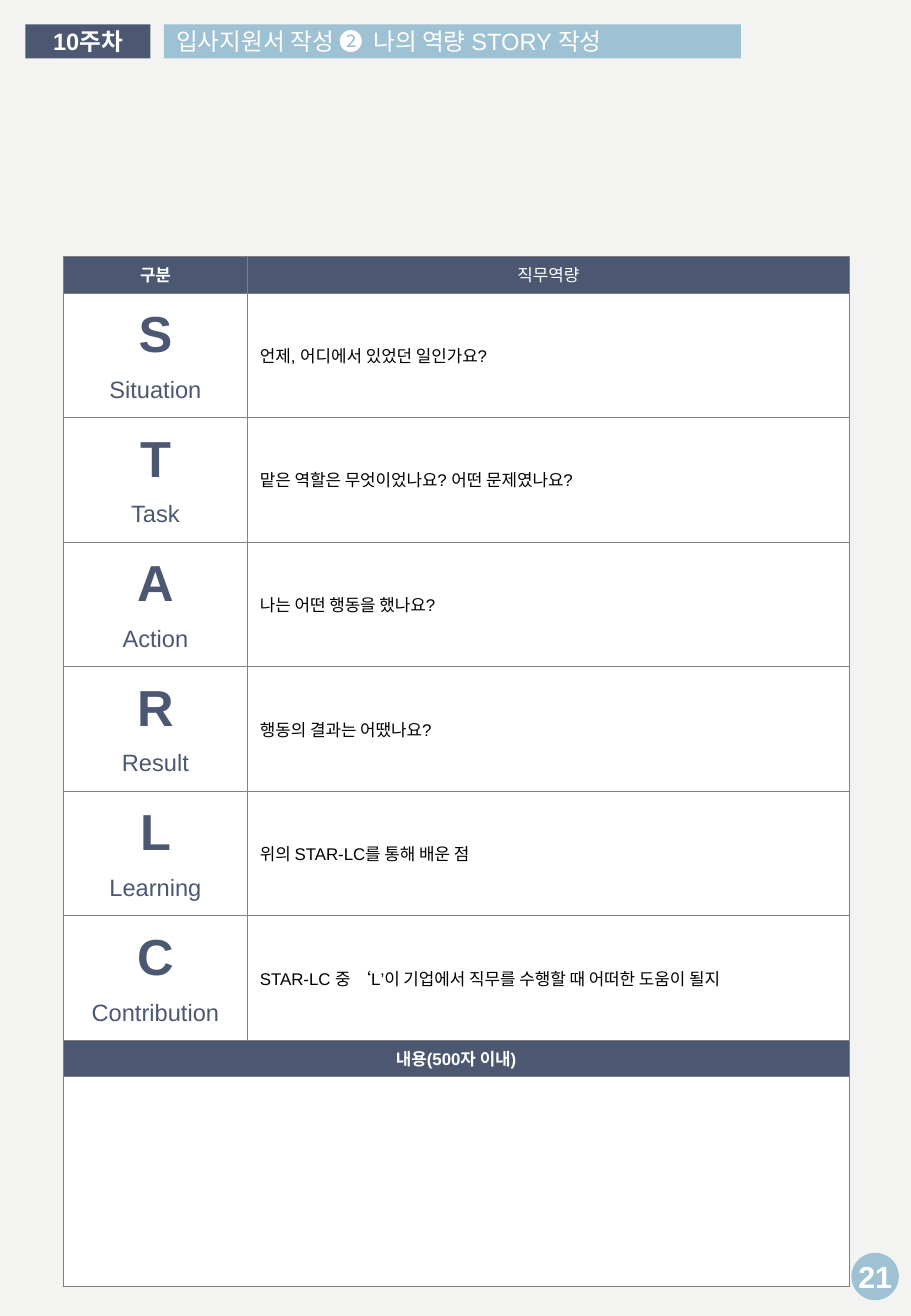
from lxml import etree
from pptx import Presentation
from pptx import util as u
from pptx.dml.color import RGBColor
from pptx.enum import shapes, text
from pptx.oxml.ns import qn

PX = 4572  # 200 px to the inch
NAVY, BLUE, WHITE, GREY = "4C5871", "9EC1D4", "FFFFFF", "808080"
LEFT, MID = text.PP_ALIGN.LEFT, text.PP_ALIGN.CENTER


def paint(item, color):
    item.fill.solid()
    item.fill.fore_color.rgb = RGBColor.from_string(color)


def write(frame, words, size=10, color=WHITE, bold=False, align=MID, gap=0, more=False):
    """Fill the first paragraph, or add one below it when more is set."""
    para = frame.add_paragraph() if more else frame.paragraphs[0]
    para.alignment = align
    if gap:
        para.space_before = u.Pt(gap)
    run = para.add_run()
    run.text = words
    run.font.name = "Arial"
    run.font.size = u.Pt(size)
    run.font.bold = bold
    run.font.color.rgb = RGBColor.from_string(color)


deck = Presentation()
deck.slide_width, deck.slide_height = 1500 * PX, 2166 * PX
slide = deck.slides.add_slide(deck.slide_layouts[5])
paint(slide.background, "F3F3F2")

# Heading
title = slide.shapes.title
title.left, title.top, title.width, title.height = (n * PX for n in (270, 40, 950, 56))
paint(title, BLUE)
title.text_frame.auto_size = text.MSO_AUTO_SIZE.NONE
title.text_frame.vertical_anchor = text.MSO_ANCHOR.MIDDLE
write(title.text_frame, "입사지원서 작성 ❷  나의 역량 STORY 작성", size=14, align=LEFT)

# Week tag and page number
kinds = shapes.MSO_SHAPE
marks = [
    (kinds.RECTANGLE, (42, 40, 206, 56), NAVY, "10주차", 14),
    (kinds.OVAL, (1402, 2062, 78, 78), BLUE, "21", 18),
]
for kind, box, color, words, size in marks:
    mark = slide.shapes.add_shape(kind, *(n * PX for n in box))
    mark.shadow.inherit = False
    mark.line.fill.background()
    paint(mark, color)
    frame = mark.text_frame
    frame.margin_left = frame.margin_right = frame.margin_top = frame.margin_bottom = 0
    frame.vertical_anchor = text.MSO_ANCHOR.MIDDLE
    frame.word_wrap = False
    write(frame, words, size=size, bold=True)

# STAR-LC table
steps = [
    ("Situation", "언제, 어디에서 있었던 일인가요?"),
    ("Task", "맡은 역할은 무엇이었나요? 어떤 문제였나요?"),
    ("Action", "나는 어떤 행동을 했나요?"),
    ("Result", "행동의 결과는 어땠나요?"),
    ("Learning", "위의 STAR-LC를 통해 배운 점"),
    ("Contribution", "STAR-LC 중 ‘L’이 기업에서 직무를 수행할 때 어떠한 도움이 될지"),
]
cols = [304, 990]
rows = [56] + [205] * len(steps) + [57, 346]
table = slide.shapes.add_table(
    len(rows), len(cols), 104 * PX, 422 * PX, sum(cols) * PX, sum(rows) * PX
).table
table.horz_banding = False
for col, width in zip(table.columns, cols):
    col.width = width * PX
for row, height in zip(table.rows, rows):
    row.height = height * PX

bars = (0, len(steps) + 1)
for at, row in enumerate(table.rows):
    for cell in row.cells:
        cell.vertical_anchor = text.MSO_ANCHOR.MIDDLE
        props = cell._tc.get_or_add_tcPr()
        for side in ("a:lnL", "a:lnR", "a:lnT", "a:lnB"):
            line = etree.SubElement(props, qn(side), w=str(u.Pt(0.5)))
            solid = etree.SubElement(line, qn("a:solidFill"))
            etree.SubElement(solid, qn("a:srgbClr"), val=GREY)
        paint(cell, NAVY if at in bars else WHITE)

write(table.cell(0, 0).text_frame, "구분", bold=True)
write(table.cell(0, 1).text_frame, "직무역량")
for at, (name, ask) in enumerate(steps, 1):
    frame = table.cell(at, 0).text_frame
    write(frame, name[0], size=30, color=NAVY, bold=True)
    write(frame, name, size=14, color=NAVY, gap=8, more=True)
    write(table.cell(at, 1).text_frame, ask, color="000000", align=LEFT)

for at in (bars[1], bars[1] + 1):
    table.cell(at, 0).merge(table.cell(at, 1))
write(table.cell(bars[1], 0).text_frame, "내용(500자 이내)", bold=True)

deck.save("out.pptx")
